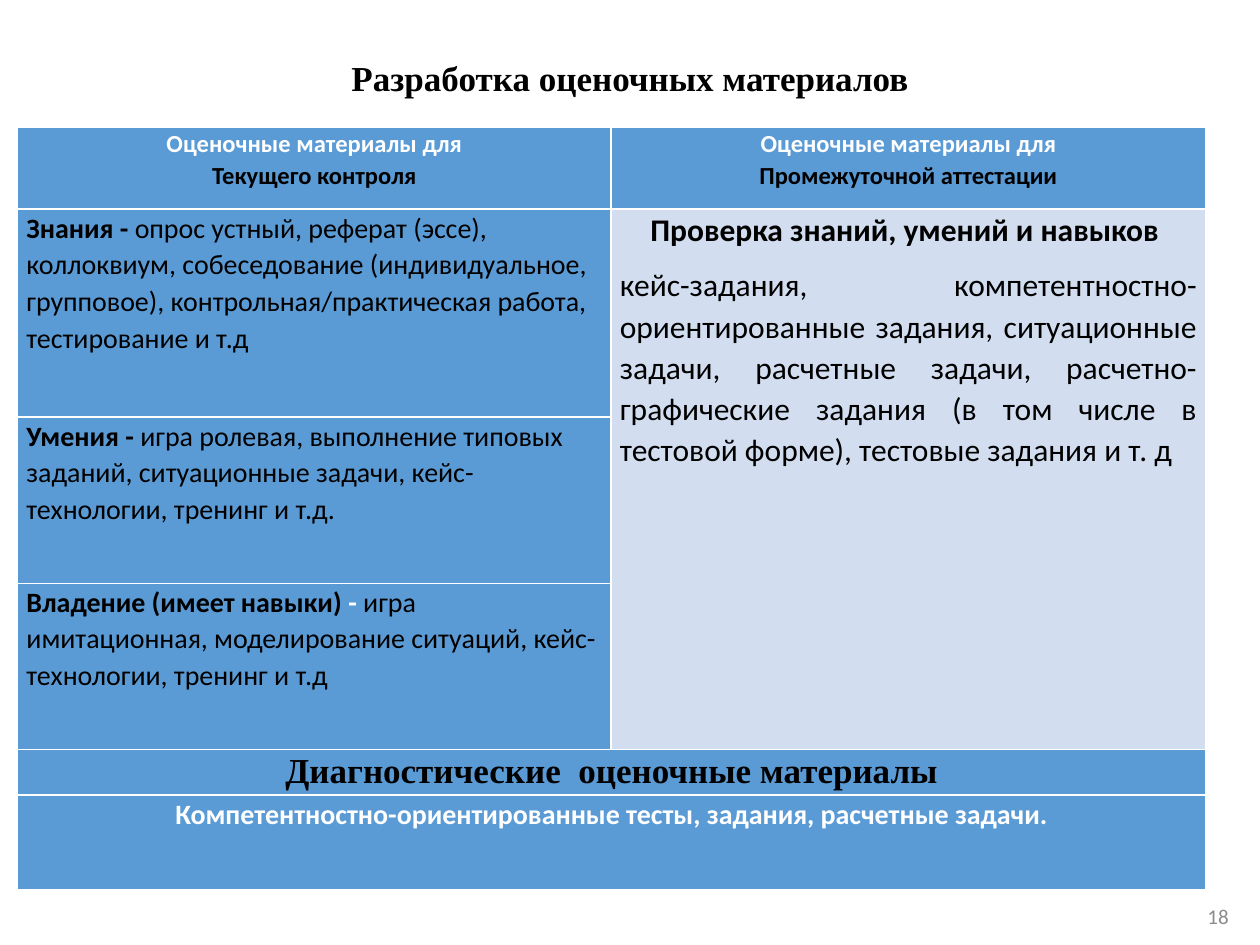
from pptx import Presentation
from pptx.dml.color import RGBColor
from pptx.enum.text import MSO_ANCHOR, PP_ALIGN
from pptx.util import Inches, Pt

BLACK = RGBColor(0x00, 0x00, 0x00)
WHITE = RGBColor(0xFF, 0xFF, 0xFF)
GRAY = RGBColor(0x8C, 0x8C, 0x8C)
BLUE = RGBColor(0x5B, 0x9B, 0xD5)
PALE_BLUE = RGBColor(0xD2, 0xDE, 0xEF)
SANS = "Calibri"
SERIF = "Times New Roman"
COLUMN_WIDTHS = [4.71, 4.72]
ROW_HEIGHTS = [0.65, 1.65, 1.32, 1.32, 0.36, 0.75]
HEADINGS = ["Текущего контроля", "Промежуточной аттестации"]
CURRENT_CONTROL = [
    [("Знания - ", True, BLACK),
     ("опрос устный, реферат (эссе), коллоквиум, собеседование "
      "(индивидуальное, групповое), контрольная/практическая работа, "
      "тестирование и т.д", False, BLACK)],
    [("Умения - ", True, BLACK),
     ("игра ролевая, выполнение типовых заданий, ситуационные задачи, "
      "кейс-технологии, тренинг и т.д.", False, BLACK)],
    [("Владение (имеет навыки) ", True, BLACK),
     ("- ", True, WHITE),
     ("игра имитационная, моделирование ситуаций, кейс-технологии, "
      "тренинг и т.д", False, BLACK)],
]
ASSESSMENT_TASKS = (
    "кейс-задания, компетентностно- ориентированные задания, ситуационные "
    "задачи, расчетные задачи, расчетно-графические задания (в том числе в "
    "тестовой форме), тестовые задания и т. д"
)


def write_paragraph(para, spans, size, align, font=SANS, spacing=1.07):
    para.alignment = align
    para.line_spacing = spacing
    for text, bold, color in spans:
        span = para.add_run()
        span.text = text
        span.font.name = font
        span.font.size = Pt(size)
        span.font.bold = bold
        span.font.color.rgb = color


def place(shape, left, top, width, height):
    shape.left, shape.top = Inches(left), Inches(top)
    shape.width, shape.height = Inches(width), Inches(height)


def add_title(page):
    title = page.shapes.title
    place(title, 0.69, 0.4, 8.62, 0.48)
    title.text_frame.vertical_anchor = MSO_ANCHOR.MIDDLE
    write_paragraph(title.text_frame.paragraphs[0],
                    [("Разработка оценочных материалов", True, BLACK)],
                    20, PP_ALIGN.CENTER, SERIF, 0.9)


def add_grid(page):
    frame = page.shapes.add_table(
        len(ROW_HEIGHTS), len(COLUMN_WIDTHS), Inches(0.14), Inches(1.01),
        Inches(sum(COLUMN_WIDTHS)), Inches(sum(ROW_HEIGHTS)))
    table = frame.table
    table.horz_banding = False
    for column, width in zip(table.columns, COLUMN_WIDTHS):
        column.width = Inches(width)
    for row, height in zip(table.rows, ROW_HEIGHTS):
        row.height = Inches(height)
    for cell in table.iter_cells():
        cell.margin_left = cell.margin_right = Inches(0.07)
        cell.margin_top = cell.margin_bottom = 0
        cell.fill.solid()
        cell.fill.fore_color.rgb = BLUE
    table.cell(1, 1).merge(table.cell(3, 1))
    for row in (4, 5):
        table.cell(row, 0).merge(table.cell(row, 1))
    return table


def fill_headings(table):
    for column, heading in enumerate(HEADINGS):
        text_frame = table.cell(0, column).text_frame
        write_paragraph(text_frame.paragraphs[0],
                        [("Оценочные материалы для", True, WHITE)],
                        14, PP_ALIGN.CENTER)
        write_paragraph(text_frame.add_paragraph(),
                        [(heading, True, BLACK)], 14, PP_ALIGN.CENTER)


def fill_current_control(table):
    for row, spans in enumerate(CURRENT_CONTROL, start=1):
        para = table.cell(row, 0).text_frame.paragraphs[0]
        write_paragraph(para, spans, 16, PP_ALIGN.LEFT)


def fill_assessment(table):
    cell = table.cell(1, 1)
    for row in (1, 2, 3):
        table.cell(row, 1).fill.fore_color.rgb = PALE_BLUE
    heading = cell.text_frame.paragraphs[0]
    write_paragraph(heading,
                    [("Проверка знаний, умений и навыков ", True, BLACK)],
                    18, PP_ALIGN.CENTER)
    heading.space_after = Pt(8)
    write_paragraph(cell.text_frame.add_paragraph(),
                    [(ASSESSMENT_TASKS, False, BLACK)], 18, PP_ALIGN.JUSTIFY)


def fill_diagnostics(table):
    write_paragraph(table.cell(4, 0).text_frame.paragraphs[0],
                    [("Диагностические  оценочные материалы", True, BLACK)],
                    20, PP_ALIGN.CENTER, SERIF)
    write_paragraph(table.cell(5, 0).text_frame.paragraphs[0],
                    [("Компетентностно-ориентированные тесты, задания, "
                      "расчетные задачи.", True, WHITE)],
                    16, PP_ALIGN.CENTER)


def add_page_number(page):
    box = page.shapes.add_textbox(
        Inches(7.6), Inches(7.07), Inches(2.25), Inches(0.4))
    box.text_frame.word_wrap = True
    box.text_frame.vertical_anchor = MSO_ANCHOR.MIDDLE
    write_paragraph(box.text_frame.paragraphs[0], [("18", False, GRAY)],
                    12, PP_ALIGN.RIGHT, spacing=1.0)


def main():
    deck = Presentation()
    deck.slide_width, deck.slide_height = Inches(10), Inches(7.5)
    page = deck.slides.add_slide(deck.slide_layouts[5])
    add_title(page)
    table = add_grid(page)
    fill_headings(table)
    fill_current_control(table)
    fill_assessment(table)
    fill_diagnostics(table)
    add_page_number(page)
    deck.save("out.pptx")


if __name__ == "__main__":
    main()
